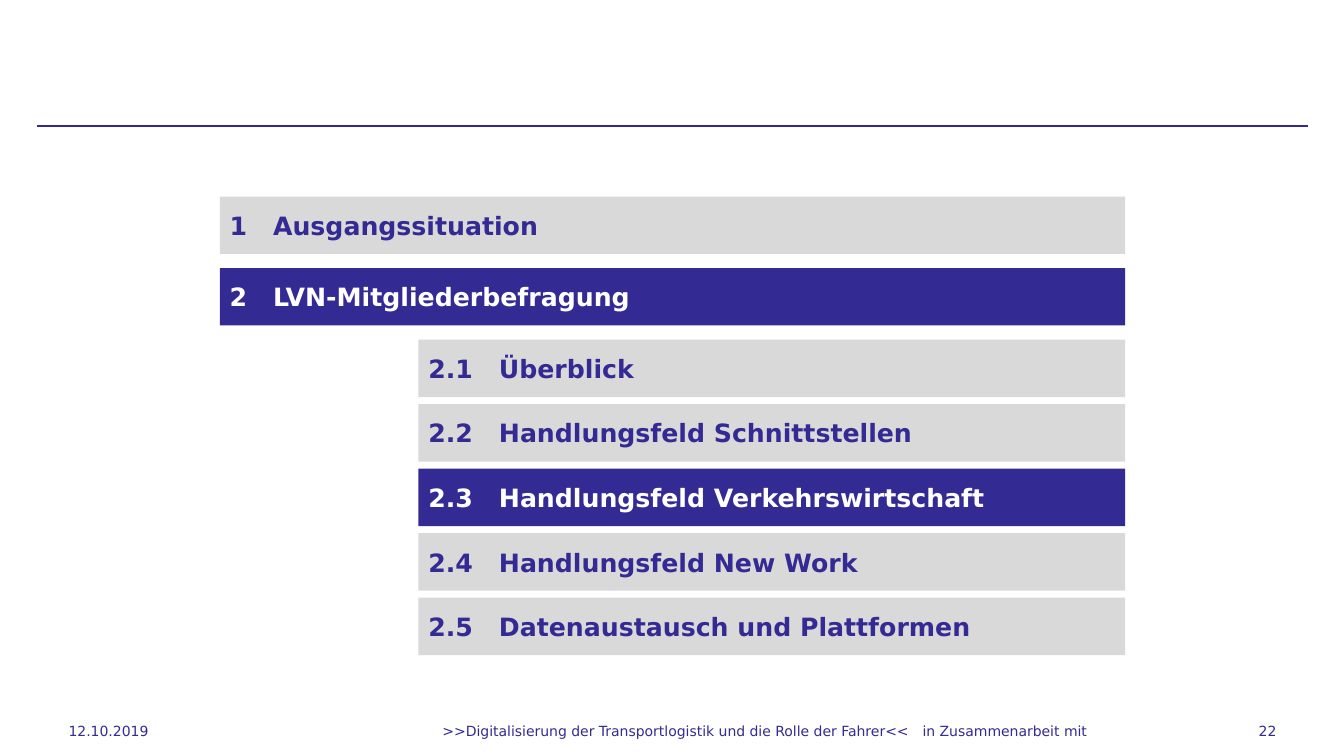
from lxml.etree import SubElement
from pptx import Presentation
from pptx.dml.color import RGBColor
from pptx.enum.shapes import MSO_CONNECTOR as Connector, MSO_SHAPE as Shape
from pptx.enum.text import MSO_ANCHOR as Anchor, PP_ALIGN as Align
from pptx.oxml.ns import qn
from pptx.util import Inches, Pt

INDIGO = RGBColor(0x34, 0x2A, 0x94)
GREY = RGBColor(0xD9, 0xD9, 0xD9)
WHITE = RGBColor(0xFF, 0xFF, 0xFF)
FONT = "DejaVu Sans"
BAR_HEIGHT = 0.57
CHAPTER_PITCH = 0.71
SECTION_PITCH = 0.64
AGENDA_INDENT = 1.97

CHAPTERS = [("1", "Ausgangssituation"), ("2", "LVN-Mitgliederbefragung")]
SECTIONS = [
    ("2.1", "Überblick"),
    ("2.2", "Handlungsfeld Schnittstellen"),
    ("2.3", "Handlungsfeld Verkehrswirtschaft"),
    ("2.4", "Handlungsfeld New Work"),
    ("2.5", "Datenaustausch und Plattformen"),
]
CURRENT = {"2", "2.3"}


def write(frame, text, size, color, align=Align.LEFT, bold=False):
    """Fill a text frame with one formatted paragraph."""
    frame.word_wrap = True
    paragraph = frame.paragraphs[0]
    paragraph.text = text
    paragraph.alignment = align
    for run in paragraph.runs:
        run.font.name = FONT
        run.font.size = Pt(size)
        run.font.bold = bold
        run.font.color.rgb = color
    return paragraph


def add_bars(slide, entries, left, top, width, pitch, title_tab):
    """Stack one numbered bar per entry, highlighting the current ones."""
    for row, (number, title) in enumerate(entries):
        current = number in CURRENT
        bar = slide.shapes.add_shape(
            Shape.RECTANGLE, Inches(left), Inches(top + row * pitch),
            Inches(width), Inches(BAR_HEIGHT))
        bar.shadow.inherit = False
        bar.fill.solid()
        bar.fill.fore_color.rgb = INDIGO if current else GREY
        bar.line.fill.background()
        bar.text_frame.vertical_anchor = Anchor.MIDDLE
        entry = write(bar.text_frame, f"{number}\t{title}", 18,
                      WHITE if current else INDIGO, bold=True)
        stops = SubElement(entry._p.get_or_add_pPr(), qn("a:tabLst"))
        SubElement(stops, qn("a:tab"), pos=str(Inches(title_tab)), algn="l")


def add_agenda(slide, left, top, width):
    """Place the chapters and, indented below them, the sections."""
    add_bars(slide, CHAPTERS, left, top, width, CHAPTER_PITCH, 0.43)
    add_bars(slide, SECTIONS, left + AGENDA_INDENT,
             top + len(CHAPTERS) * CHAPTER_PITCH,
             width - AGENDA_INDENT, SECTION_PITCH, 0.7)


def add_header_rule(slide, left, top, width):
    """Draw the thin line under the header."""
    rule = slide.shapes.add_connector(
        Connector.STRAIGHT, Inches(left), Inches(top),
        Inches(left + width), Inches(top))
    rule.line.color.rgb = INDIGO
    rule.line.width = Pt(0.75)
    SubElement(rule._element.spPr, qn("a:effectLst"))


def add_footer(slide, top, height):
    """Place date, talk title, partner note and page number."""
    parts = [
        ("12.10.2019", 0.68, 1.57, Align.LEFT),
        (">>Digitalisierung der Transportlogistik und die Rolle der Fahrer<<",
         2.41, 8.58, Align.CENTER),
        ("in Zusammenarbeit mit", 8.5, 2.28, Align.RIGHT),
        ("22", 11.16, 1.5, Align.RIGHT),
    ]
    for text, left, width, align in parts:
        frame = slide.shapes.add_textbox(
            Inches(left), Inches(top), Inches(width), Inches(height)).text_frame
        frame.margin_left = frame.margin_right = 0
        frame.margin_top = frame.margin_bottom = 0
        frame.vertical_anchor = Anchor.MIDDLE
        write(frame, text, 10, INDIGO, align)


def main():
    """Build the agenda slide and save it."""
    deck = Presentation()
    deck.slide_width, deck.slide_height = Inches(13.33), Inches(7.5)
    slide = deck.slides.add_slide(deck.slide_layouts[6])
    add_header_rule(slide, 0.37, 1.25, 12.6)
    add_agenda(slide, 2.18, 1.95, 8.98)
    add_footer(slide, 7.05, 0.4)
    deck.save("out.pptx")


if __name__ == "__main__":
    main()
